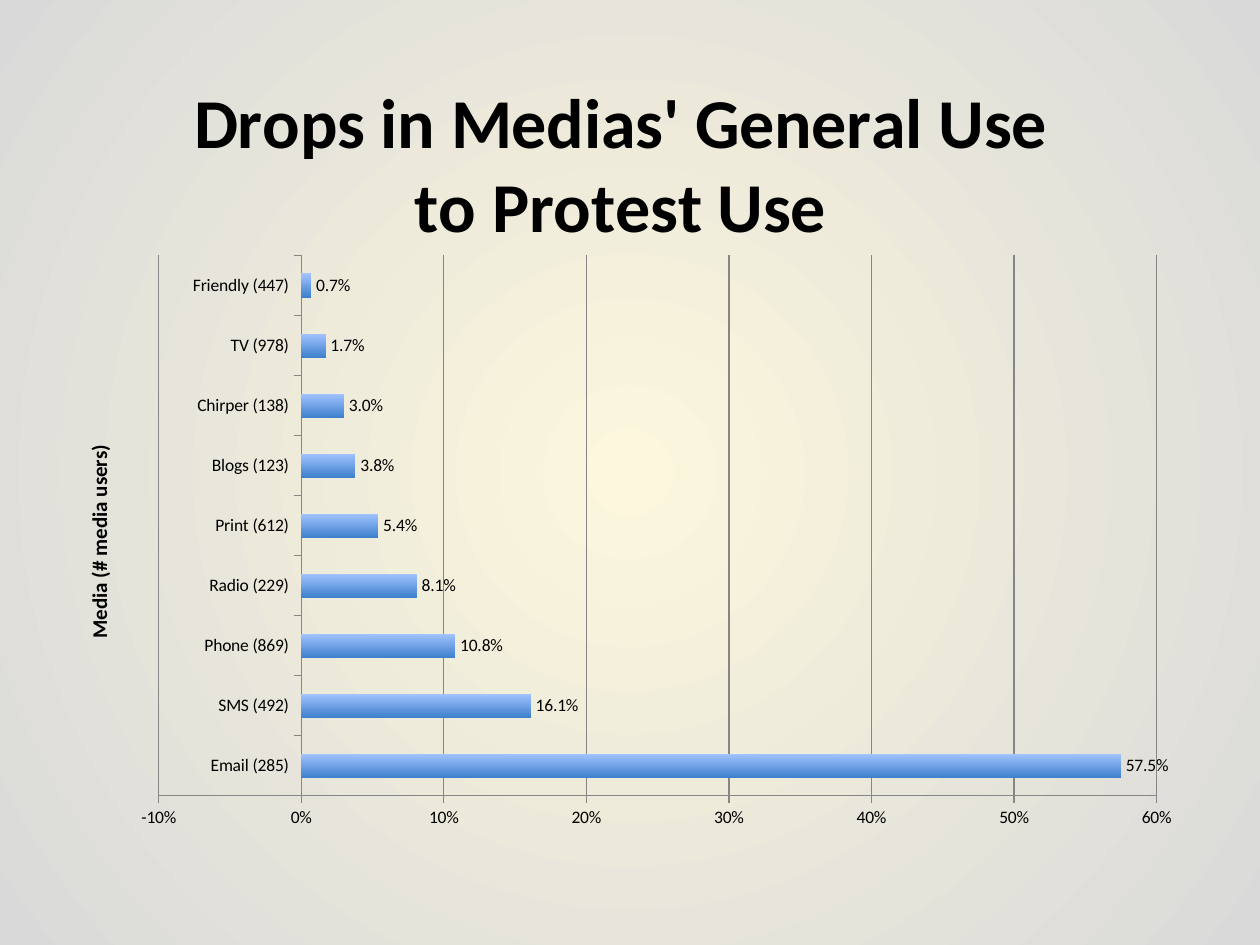
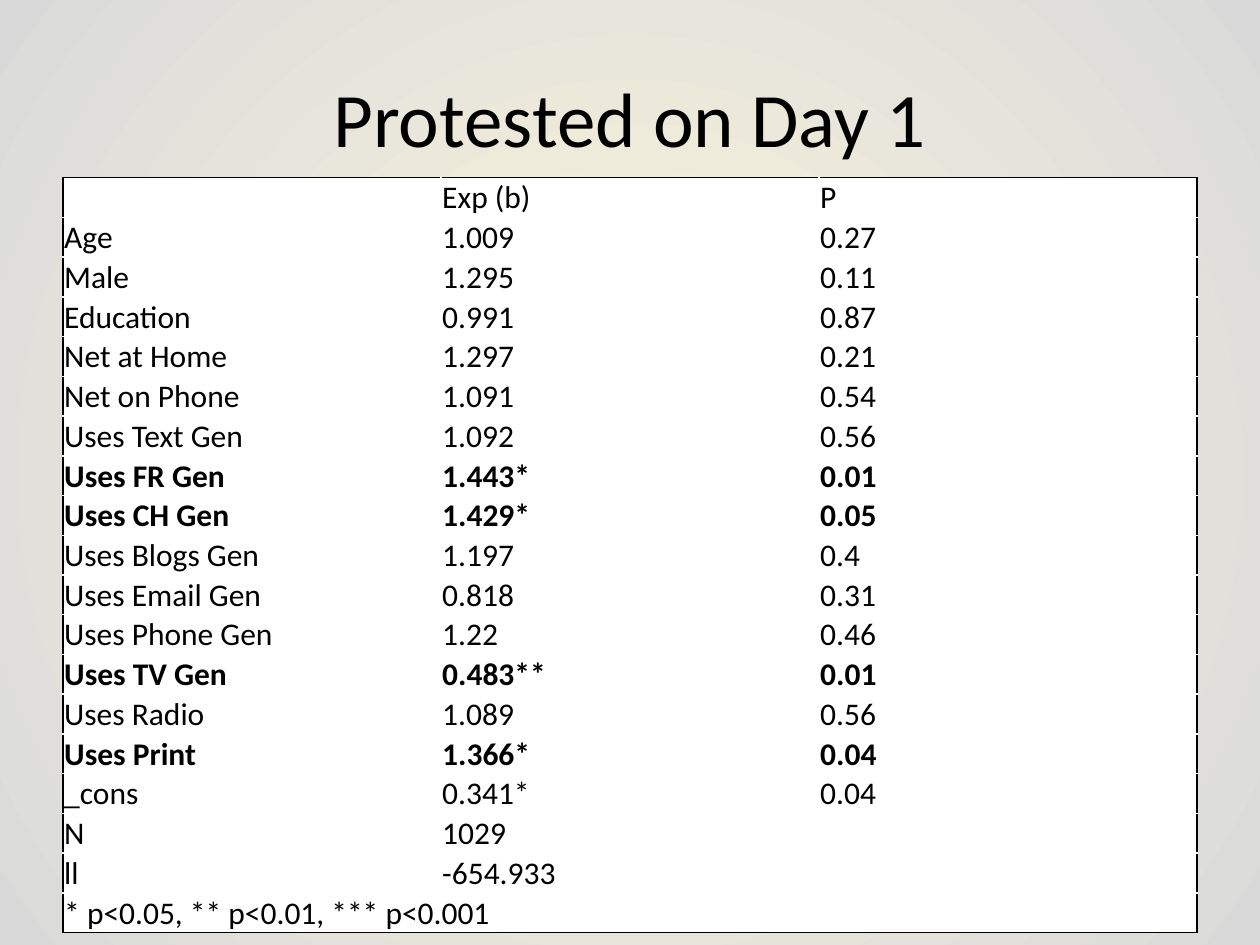
from dataclasses import dataclass

from lxml import etree
from pptx import Presentation
from pptx import util as u
from pptx.chart.data import CategoryChartData
from pptx.dml.color import RGBColor
from pptx.enum import chart as ch, text
from pptx.oxml import parse_xml
from pptx.oxml.ns import nsdecls, qn

Pt = u.Pt


@dataclass(frozen=True)
class Theme:
    font: str = "Calibri"
    ink: str = "000000"
    paper: str = "FFFFFF"
    glow: str = "FCF7DD"
    edge: str = "D9D9D9"
    grid: str = "868686"
    bar_top: str = "A3C4FF"
    bar_bottom: str = "3F80CD"
    title: float = 44
    chart_title: float = 40
    cell: float = 18
    axis_title: float = 12
    label: float = 10


MEDIA_DROPS = {
    "Email (285)": 0.575, "SMS (492)": 0.161, "Phone (869)": 0.108,
    "Radio (229)": 0.081, "Print (612)": 0.054, "Blogs (123)": 0.038,
    "Chirper (138)": 0.03, "TV (978)": 0.017, "Friendly (447)": 0.007,
}
REGRESSION = [
    ("", "Exp (b)", "P"),
    ("Age", "1.009", "0.27"),
    ("Male", "1.295", "0.11"),
    ("Education", "0.991", "0.87"),
    ("Net at Home", "1.297", "0.21"),
    ("Net on Phone", "1.091", "0.54"),
    ("Uses Text Gen", "1.092", "0.56"),
    ("Uses FR Gen", "1.443*", "0.01"),
    ("Uses CH Gen", "1.429*", "0.05"),
    ("Uses Blogs Gen", "1.197", "0.4"),
    ("Uses Email Gen", "0.818", "0.31"),
    ("Uses Phone Gen", "1.22", "0.46"),
    ("Uses TV Gen", "0.483**", "0.01"),
    ("Uses Radio", "1.089", "0.56"),
    ("Uses Print", "1.366*", "0.04"),
    ("_cons", "0.341*", "0.04"),
    ("N", "1029", ""),
    ("ll", "-654.933", ""),
    ("* p<0.05, ** p<0.01, *** p<0.001", "", ""),
]
SIGNIFICANT = {"Uses FR Gen", "Uses CH Gen", "Uses TV Gen", "Uses Print"}


class Deck:
    TITLE_ONLY, BLANK = 5, 6

    def __init__(self, theme):
        self.theme = theme
        self.prs = Presentation()
        self.prs.slide_width, self.prs.slide_height = Pt(720), Pt(540)
        self.s = None
        self.background()

    def background(self):
        """Give the master a circular glow that every slide inherits."""
        t = self.theme
        fill = self.prs.slide_master.background.fill
        fill.solid()
        solid = self.prs.slide_master._element.cSld.find(".//" + qn("a:solidFill"))
        solid.getparent().replace(solid, parse_xml(
            f'<a:gradFill {nsdecls("a")} rotWithShape="1"><a:gsLst>'
            f'<a:gs pos="0"><a:srgbClr val="{t.glow}"/></a:gs>'
            f'<a:gs pos="100000"><a:srgbClr val="{t.edge}"><a:alpha val="60000"/></a:srgbClr></a:gs>'
            '</a:gsLst><a:path path="circle">'
            '<a:fillToRect l="50000" t="50000" r="50000" b="50000"/></a:path></a:gradFill>'))

    def slide(self, layout):
        self.s = self.prs.slides.add_slide(self.prs.slide_layouts[layout])

    def style(self, font, size, bold=False):
        for name, value in dict(name=self.theme.font, size=Pt(size), bold=bold).items():
            setattr(font, name, value)
        font.color.rgb = RGBColor.from_string(self.theme.ink)

    def title(self, words, box):
        sp = self.s.shapes.title
        for name, value in zip(("left", "top", "width", "height"), box):
            setattr(sp, name, Pt(value))
        tf = sp.text_frame
        tf.text = words
        tf.vertical_anchor = text.MSO_ANCHOR.MIDDLE
        p = tf.paragraphs[0]
        p.alignment = text.PP_ALIGN.CENTER
        self.style(p.runs[0].font, self.theme.title)

    def heading(self, owner, words, size):
        """Set the title of a chart or of one of its axes."""
        tf = (owner.chart_title if hasattr(owner, "chart_title") else owner.axis_title).text_frame
        tf.text = words
        self.style(tf.paragraphs[0].runs[0].font, size, bold=True)

    def place(self, parent, **layout):
        """Fix a chart part by fractions of the chart area."""
        old = parent.find(qn("c:layout"))
        if old is not None:
            parent.remove(old)
        node = etree.Element(qn("c:layout"))
        manual = etree.SubElement(node, qn("c:manualLayout"))
        for name, value in layout.items():
            etree.SubElement(manual, qn("c:" + name)).set("val", str(value))
        tx = parent.find(qn("c:tx"))
        parent.insert(0 if tx is None else 1, node)

    def bar_chart(self, words, axis_words, values, box):
        t = self.theme
        data = CategoryChartData(number_format="0.0%")
        data.categories = list(values)
        data.add_series("Series 1", list(values.values()))
        chart = self.s.shapes.add_chart(
            ch.XL_CHART_TYPE.BAR_CLUSTERED, *map(Pt, box), data).chart
        self.style(chart.font, t.label)
        chart.has_legend = False
        self.heading(chart, words, t.chart_title)
        self.heading(chart.category_axis, axis_words, t.axis_title)
        self.place(chart.chart_title._element, xMode="edge", yMode="edge", x=0.11, y=0.03)
        self.place(chart._chartSpace.chart.plotArea, layoutTarget="inner", xMode="edge",
                   yMode="edge", x=0.09, y=0.27, w=0.88, h=0.67)

        axis = chart.value_axis
        for name, value in dict(minimum_scale=-0.1, maximum_scale=0.6, major_unit=0.1,
                                has_major_gridlines=True).items():
            setattr(axis, name, value)
        axis.tick_labels.number_format = "0%"
        axis.tick_labels.number_format_is_linked = False
        for a in (axis, chart.category_axis):
            a.major_tick_mark = ch.XL_TICK_MARK.OUTSIDE
        for part in (axis, chart.category_axis, axis.major_gridlines):
            part.format.line.color.rgb = RGBColor.from_string(t.grid)
            part.format.line.width = Pt(0.75)

        plot = chart.plots[0]
        plot.gap_width, plot.vary_by_categories = 150, False
        plot.has_data_labels = True
        labels = plot.data_labels
        for name, value in dict(show_value=True, number_format="0.0%",
                                number_format_is_linked=False,
                                position=ch.XL_LABEL_POSITION.OUTSIDE_END).items():
            setattr(labels, name, value)
        self.style(labels.font, t.label)
        fill = plot.series[0].format.fill
        fill.gradient()
        fill.gradient_angle = 270
        for stop, color in zip(fill.gradient_stops, (t.bar_top, t.bar_bottom)):
            stop.color.rgb = RGBColor.from_string(color)

    def borders(self, cell, **colors):
        tcPr = cell._tc.get_or_add_tcPr()
        for side, color in colors.items():
            tcPr.append(parse_xml(
                f'<a:ln{side} {nsdecls("a")} w="{Pt(1)}"><a:solidFill>'
                f'<a:srgbClr val="{color}"/></a:solidFill></a:ln{side}>'))

    def table(self, rows, bold_rows, box):
        """Draw rows with a black frame and white inner lines; the last row is merged."""
        t = self.theme
        n, m = len(rows), len(rows[0])
        table = self.s.shapes.add_table(n, m, *map(Pt, box)).table
        table.first_row = table.horz_banding = False
        for i, row in enumerate(rows):
            for j, words in enumerate(row):
                cell = table.cell(i, j)
                for side in ("left", "right", "top"):
                    setattr(cell, "margin_" + side, Pt(0.72))
                cell.margin_bottom = 0
                outer = dict(L=j == 0, R=j == m - 1 or i == n - 1, T=i == 0, B=i == n - 1)
                self.borders(cell, **{k: t.ink if v else t.paper for k, v in outer.items()})
                cell.fill.solid()
                cell.fill.fore_color.rgb = RGBColor.from_string(t.paper)
                p = cell.text_frame.paragraphs[0]
                if words:
                    r = p.add_run()
                    r.text = words
                    self.style(r.font, t.cell, row[0] in bold_rows)
                else:
                    self.style(p.font, t.cell)
        table.cell(n - 1, 0).merge(table.cell(n - 1, m - 1))


def main():
    deck = Deck(Theme())
    deck.slide(Deck.BLANK)
    deck.bar_chart("Drops in Medias' General Use to Protest Use", "Media (# media users)",
                   MEDIA_DROPS, (32.4, 21.6, 648, 460.8))
    deck.slide(Deck.TITLE_ONLY)
    deck.title("Protested on Day 1", (36, 21.6, 648, 90))
    deck.table(REGRESSION, SIGNIFICANT, (36, 101.5, 648, 18 * len(REGRESSION)))
    deck.prs.save("out.pptx")


if __name__ == "__main__":
    main()
